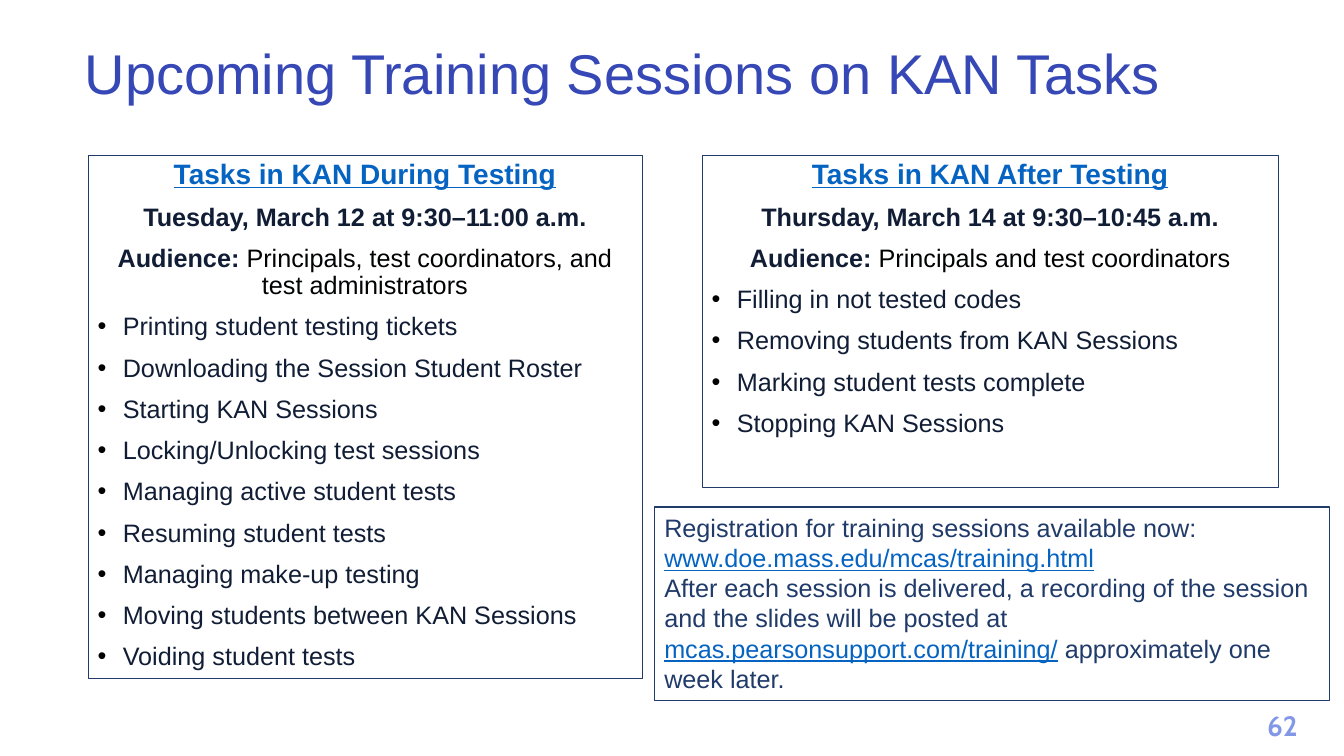
from pptx import Presentation
from pptx.dml.color import RGBColor
from pptx.enum.shapes import MSO_SHAPE
from pptx.enum.text import MSO_ANCHOR, PP_ALIGN
from pptx.oxml.ns import qn
from pptx.util import Inches, Pt
from lxml import etree

NAVY, INK, BLACK, LINK = "203B6A", "101D35", "010203", "0563C1"


def add_run(p, text, size, color, bold=False, underline=False, font="Arial"):
    r = p.add_run()
    r.text = text
    r.font.name, r.font.size = font, Pt(size)
    r.font.bold, r.font.underline = bold, underline
    r.font.color.rgb = RGBColor.from_string(color)


def add_box(left, top, width, height, line_width, anchor):
    sp = s.shapes.add_shape(MSO_SHAPE.RECTANGLE, Inches(left), Inches(top),
                            Inches(width), Inches(height))
    sp.shadow.inherit = False
    sp.fill.background()
    sp.line.color.rgb = RGBColor.from_string(NAVY)
    sp.line.width = Pt(line_width)
    sp.text_frame.word_wrap = True
    sp.text_frame.vertical_anchor = anchor
    return sp


prs = Presentation()
prs.slide_width, prs.slide_height = Inches(13.33), Inches(7.5)
s = prs.slides.add_slide(prs.slide_layouts[5])

# Title
title = s.shapes.title
title.left, title.top = Inches(0.74), Inches(0.19)
title.width, title.height = Inches(11.5), Inches(1.14)
title.text_frame.vertical_anchor = MSO_ANCHOR.MIDDLE
p = title.text_frame.paragraphs[0]
p.alignment, p.line_spacing = PP_ALIGN.LEFT, 0.9
add_run(p, "Upcoming Training Sessions on KAN Tasks", 40, "3647B6")

# Training sessions: box, heading, time, audience, topics
sessions = [
    ((0.87, 1.54, 5.5, 5.19), "Tasks in KAN During Testing",
     "Tuesday, March 12 at 9:30–11:00 a.m.",
     "Principals, test coordinators, and test administrators",
     ["Printing student testing tickets",
      "Downloading the Session Student Roster",
      "Starting KAN Sessions",
      "Locking/Unlocking test sessions",
      "Managing active student tests",
      "Resuming student tests",
      "Managing make-up testing",
      "Moving students between KAN Sessions",
      "Voiding student tests"]),
    ((6.96, 1.54, 5.72, 3.29), "Tasks in KAN After Testing",
     "Thursday, March 14 at 9:30–10:45 a.m.",
     "Principals and test coordinators",
     ["Filling in not tested codes",
      "Removing students from KAN Sessions",
      "Marking student tests complete",
      "Stopping KAN Sessions"]),
]
for box, heading, time, audience, topics in sessions:
    tf = add_box(*box, 0.25, MSO_ANCHOR.TOP).text_frame
    p = tf.paragraphs[0]
    add_run(p, heading, 20, LINK, bold=True, underline=True)
    p = tf.add_paragraph()
    add_run(p, time, 18, INK, bold=True)
    p = tf.add_paragraph()
    add_run(p, "Audience: ", 18, INK, bold=True)
    add_run(p, audience, 18, BLACK)
    for p in tf.paragraphs:
        p.alignment = PP_ALIGN.CENTER

    for topic in topics:
        p = tf.add_paragraph()
        p.alignment = PP_ALIGN.LEFT
        add_run(p, topic, 18, INK)

    for i, p in enumerate(tf.paragraphs):
        p.line_spacing = 0.9
        p.space_before = Pt(10 if i else 0)
        if i >= 3:  # bulleted topics
            pPr = p._p.get_or_add_pPr()
            pPr.set("marL", str(Inches(0.25)))
            pPr.set("indent", str(Inches(-0.25)))
            clr = etree.SubElement(pPr, qn("a:buClr"))
            etree.SubElement(clr, qn("a:srgbClr"), val=BLACK)
            etree.SubElement(pPr, qn("a:buFont"), typeface="Arial")
            etree.SubElement(pPr, qn("a:buChar"), char="•")

# Registration note
sp = add_box(6.49, 5.03, 6.7, 1.92, 0.75, MSO_ANCHOR.TOP)
sp.fill.solid()
sp.fill.fore_color.rgb = RGBColor.from_string("FFFFFF")
tf = sp.text_frame
p = tf.paragraphs[0]
add_run(p, "Registration for training sessions available now: ", 18, NAVY)
add_run(p, "www.doe.mass.edu/mcas/training.html", 18, LINK, underline=True)
p = tf.add_paragraph()
add_run(p, "After each session is delivered, a recording of the session "
           "and the slides will be posted at ", 18, NAVY)
add_run(p, "mcas.pearsonsupport.com/training/", 18, LINK, underline=True)
add_run(p, " approximately one week later.", 18, NAVY)
for p in tf.paragraphs:
    p.alignment = PP_ALIGN.LEFT

# Slide number
tb = s.shapes.add_textbox(Inches(12.41), Inches(6.98), Inches(0.62), Inches(0.44))
tb.text_frame.word_wrap = True
p = tb.text_frame.paragraphs[0]
p.alignment = PP_ALIGN.CENTER
add_run(p, "62", 20, "8397E7", bold=True, font="Cabin")

prs.save("out.pptx")
